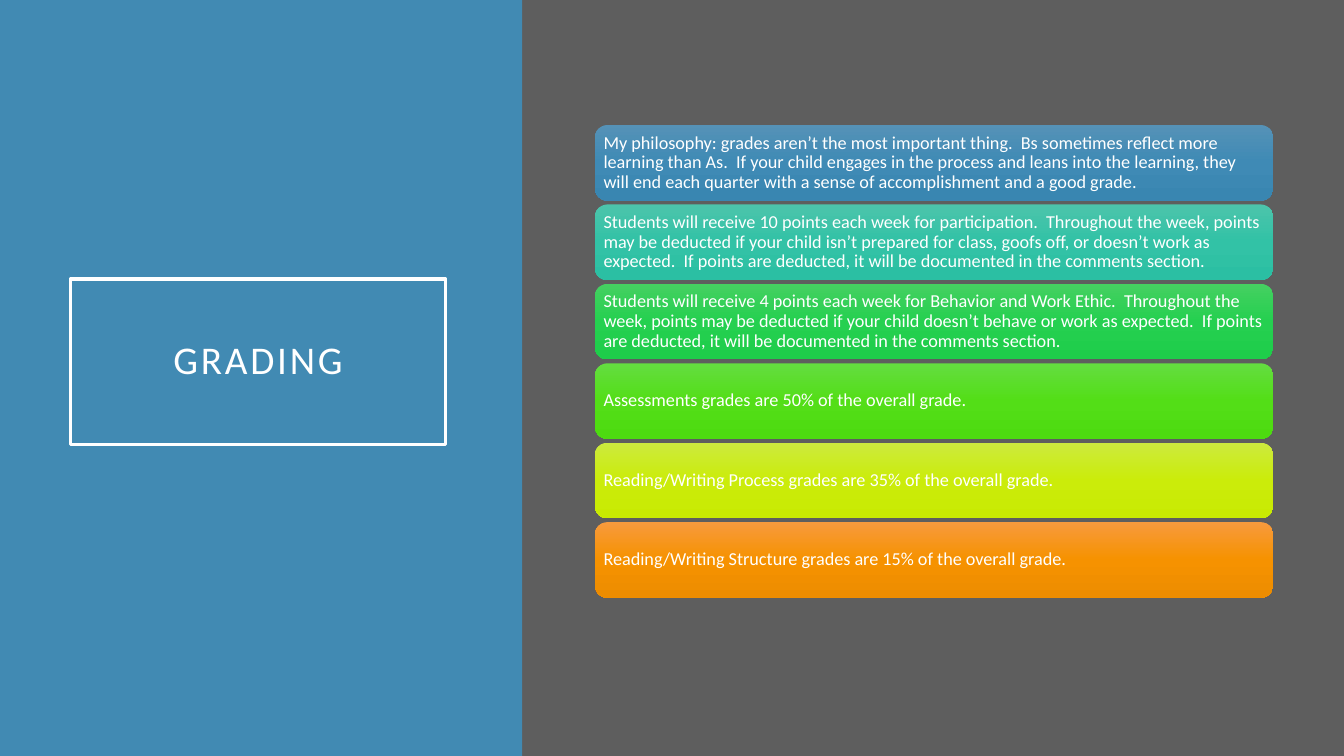
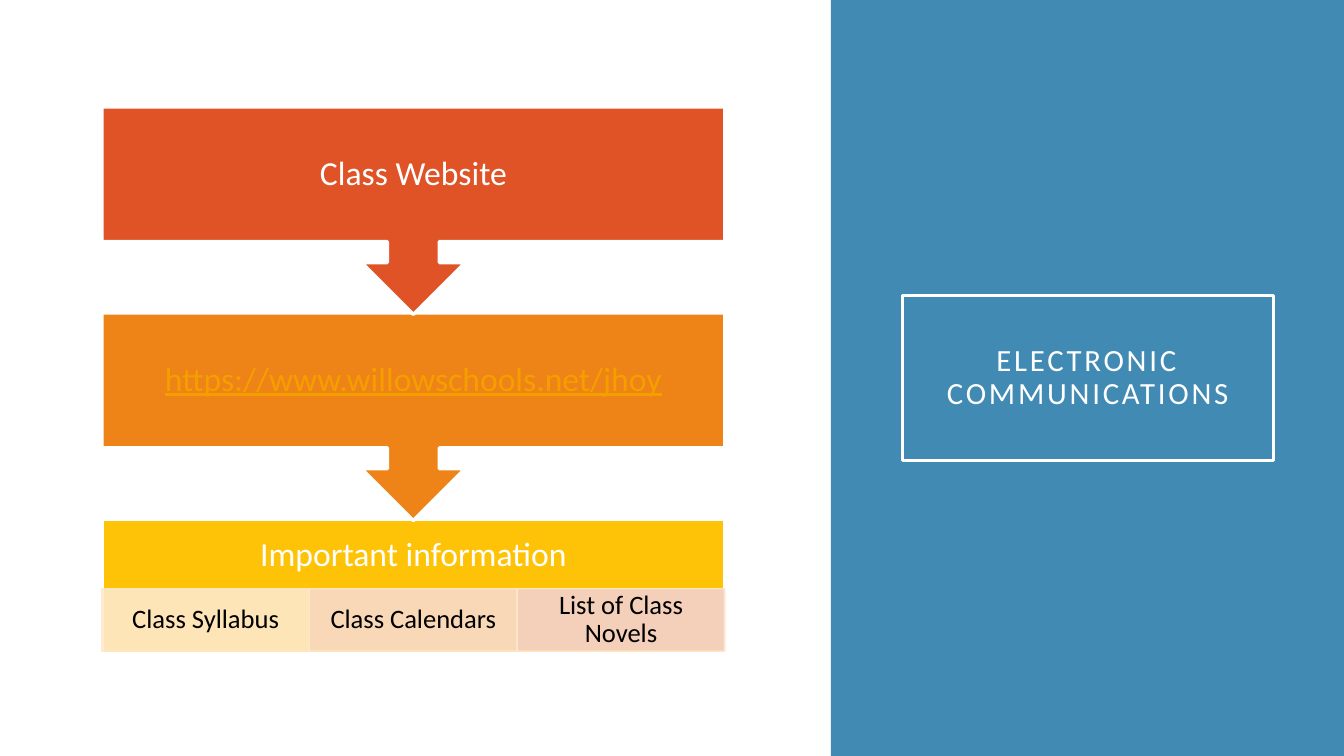
from copy import deepcopy
from dataclasses import dataclass

from lxml import etree
from pptx import Presentation
from pptx.dml.color import RGBColor
from pptx.enum.shapes import MSO_SHAPE
from pptx.enum.text import MSO_ANCHOR, MSO_AUTO_SIZE, PP_ALIGN
from pptx.oxml.ns import qn
from pptx.util import Inches, Pt

RECTANGLE = MSO_SHAPE.RECTANGLE
ROUNDED = MSO_SHAPE.ROUNDED_RECTANGLE
CALLOUT = MSO_SHAPE.DOWN_ARROW_CALLOUT
LEFT, CENTER = PP_ALIGN.LEFT, PP_ALIGN.CENTER
MIDDLE = MSO_ANCHOR.MIDDLE
NO_AUTOFIT = MSO_AUTO_SIZE.NONE
TITLE_ONLY = 5


@dataclass(frozen=True)
class Theme:
    font: str = "Calibri"
    white: str = "FFFFFF"
    black: str = "000000"
    gray: str = "5E5E5E"
    blue: str = "418AB3"
    red: str = "DF5327"
    orange: str = "EE8317"
    yellow: str = "FEC306"
    link: str = "F59E00"
    chip_line: str = "FFE9CC"
    rule_size: float = 13
    step_size: float = 24
    chip_size: float = 19
    outline: float = 2.5
    title_spacing: float = 2


THEME = Theme()
SLIDE_WIDTH, SLIDE_HEIGHT = 13.33, 7.5

GRADING_RULES = [
    ("My philosophy: grades aren’t the most important thing.  Bs sometimes reflect more "
     "learning than As.  If your child engages in the process and leans into the learning, "
     "they will end each quarter with a sense of accomplishment and a good grade.",
     ("5592B7", "3F8AB5", "3986B1")),
    ("Students will receive 10 points each week for participation.  Throughout the week, "
     "points may be deducted if your child isn’t prepared for class, goofs off, or doesn’t "
     "work as expected.  If points are deducted, it will be documented in the comments "
     "section.",
     ("4CC4AB", "32C2A6", "2BBFA3")),
    ("Students will receive 4 points each week for Behavior and Work Ethic.  Throughout the "
     "week, points may be deducted if your child doesn’t behave or work as expected.  If "
     "points are deducted, it will be documented in the comments section.",
     ("45D061", "25D050", "1ECD4A")),
    ("Assessments grades are 50% of the overall grade.",
     ("64DD40", "53DE17", "4DDB10")),
    ("Reading/Writing Process grades are 35% of the overall grade.",
     ("CCEA3E", "CBEC0A", "C8EA02")),
    ("Reading/Writing Structure grades are 15% of the overall grade.",
     ("F79A3D", "F69200", "EC8C00")),
]

WEBSITE_STEPS = [
    ("Class Website", THEME.red, THEME.white, False),
    ("https://www.willowschools.net/jhoy", THEME.orange, THEME.link, True),
]
INFORMATION = "Important information"
INFORMATION_CHIPS = [
    ("Class Syllabus", "FFE9CC"),
    ("Class Calendars", "F9DBCC"),
    ("List of Class Novels", "F3D1CD"),
]


def rgb(color):
    return RGBColor.from_string(color)


def write(shape, text, size, color=THEME.white, align=CENTER, insets=(0, 0, 0, 0),
          spacing=0, underline=False):
    frame = shape.text_frame
    frame.word_wrap = True
    frame.auto_size = NO_AUTOFIT
    frame.vertical_anchor = MIDDLE
    (frame.margin_left, frame.margin_top,
     frame.margin_right, frame.margin_bottom) = map(Inches, insets)
    paragraph = frame.paragraphs[0]
    paragraph.alignment = align
    paragraph.line_spacing = 0.9
    run = paragraph.add_run()
    run.text = text
    run.font.name = THEME.font
    run.font.size = Pt(size)
    run.font.color.rgb = rgb(color)
    if underline:
        run.font.underline = True
    if spacing:
        run.font.element.set("spc", str(int(spacing * 100))) if hasattr(
            run.font, "element") else run._r.get_or_add_rPr().set(
            "spc", str(int(spacing * 100)))


def outline(shape, color, width):
    shape.line.color.rgb = rgb(color)
    shape.line.width = Pt(width)


def add_block(slide, preset, box, fill=None, line=None, line_width=THEME.outline):
    block = slide.shapes.add_shape(preset, *map(Inches, box))
    block.shadow.inherit = False
    if fill:
        block.fill.solid()
        block.fill.fore_color.rgb = rgb(fill)
    if line:
        outline(block, line, line_width)
    else:
        block.line.fill.background()
    return block


def fill_gradient(block, colors):
    fill = block.fill
    fill.gradient()
    fill.gradient_angle = 270
    stop_list = block.element.spPr.find(".//" + qn("a:gsLst"))
    stop_list.append(deepcopy(stop_list[0]))
    for index, (stop, color) in enumerate(zip(fill.gradient_stops, colors)):
        stop.position = index / (len(colors) - 1)
        stop.color.rgb = rgb(color)


def set_opacity(block, percent):
    for color in block.element.spPr.iter(qn("a:srgbClr")):
        etree.SubElement(color, qn("a:alpha")).set("val", str(percent * 1000))


def add_titled_slide(deck, background, panel_box, title_box, title, title_size):
    slide = deck.slides.add_slide(deck.slide_layouts[TITLE_ONLY])
    slide.background.fill.solid()
    slide.background.fill.fore_color.rgb = rgb(background)
    panel = add_block(slide, RECTANGLE, panel_box, THEME.blue)
    heading = slide.shapes.title
    panel.element.addnext(heading.element)
    heading.left, heading.top, heading.width, heading.height = map(Inches, title_box)
    outline(heading, THEME.white, THEME.outline)
    write(heading, title, title_size, insets=(0.2,) * 4, spacing=THEME.title_spacing)
    return slide


def add_rule_list(slide, box, rules, bar_height=0.75):
    left, top, width, height = box
    pitch = (height - bar_height) / (len(rules) - 1)
    for index, (rule, colors) in enumerate(rules):
        bar = add_block(slide, ROUNDED, (left, top + index * pitch, width, bar_height))
        fill_gradient(bar, colors)
        write(bar, rule, THEME.rule_size, align=LEFT, insets=(0.05,) * 4)


def add_chip_row(slide, box, chips):
    left, top, width, height = box
    chip_width = width / len(chips)
    for index, (label, color) in enumerate(chips):
        chip = add_block(slide, RECTANGLE,
                         (left + index * chip_width, top, chip_width, height),
                         color, THEME.chip_line, 1)
        set_opacity(chip, 90)
        write(chip, label, THEME.chip_size, THEME.black, insets=(0.15, 0.03, 0.15, 0.03))


def add_website_flow(slide, box, steps, information, chips):
    left, top, width, height = box
    base_height, step_height, chip_height = 1.34, 2.06, 0.62
    inset = 0.19
    base_top = top + height - base_height
    pitch = (base_top - top) / len(steps)

    base = add_block(slide, RECTANGLE, (left, base_top, width, base_height),
                     THEME.yellow, THEME.white)
    write(base, information, THEME.step_size,
          insets=(inset, inset, inset, inset + chip_height))
    add_chip_row(slide, (left, base_top + 0.69, width, chip_height), chips)

    for index, (label, fill, color, underline) in reversed(list(enumerate(steps))):
        step = add_block(slide, CALLOUT, (left, top + index * pitch, width, step_height),
                         fill, THEME.white)
        write(step, label, THEME.step_size, color, insets=(inset,) * 4,
              underline=underline)


def build_grading(deck):
    slide = add_titled_slide(deck, THEME.gray, (0, 0, 5.18, SLIDE_HEIGHT),
                             (0.7, 2.77, 3.72, 1.64), "GRADING", 28)
    add_rule_list(slide, (5.9, 1.24, 6.73, 4.69), GRADING_RULES)


def build_communications(deck):
    slide = add_titled_slide(deck, THEME.white, (8.24, 0, 5.09, SLIDE_HEIGHT),
                             (8.95, 2.93, 3.68, 1.64), "ELECTRONIC COMMUNICATIONS", 22)
    add_website_flow(slide, (1.01, 1.06, 6.18, 5.43), WEBSITE_STEPS, INFORMATION,
                     INFORMATION_CHIPS)


def main():
    deck = Presentation()
    deck.slide_width = Inches(SLIDE_WIDTH)
    deck.slide_height = Inches(SLIDE_HEIGHT)
    build_grading(deck)
    build_communications(deck)
    deck.save("out.pptx")


if __name__ == "__main__":
    main()
